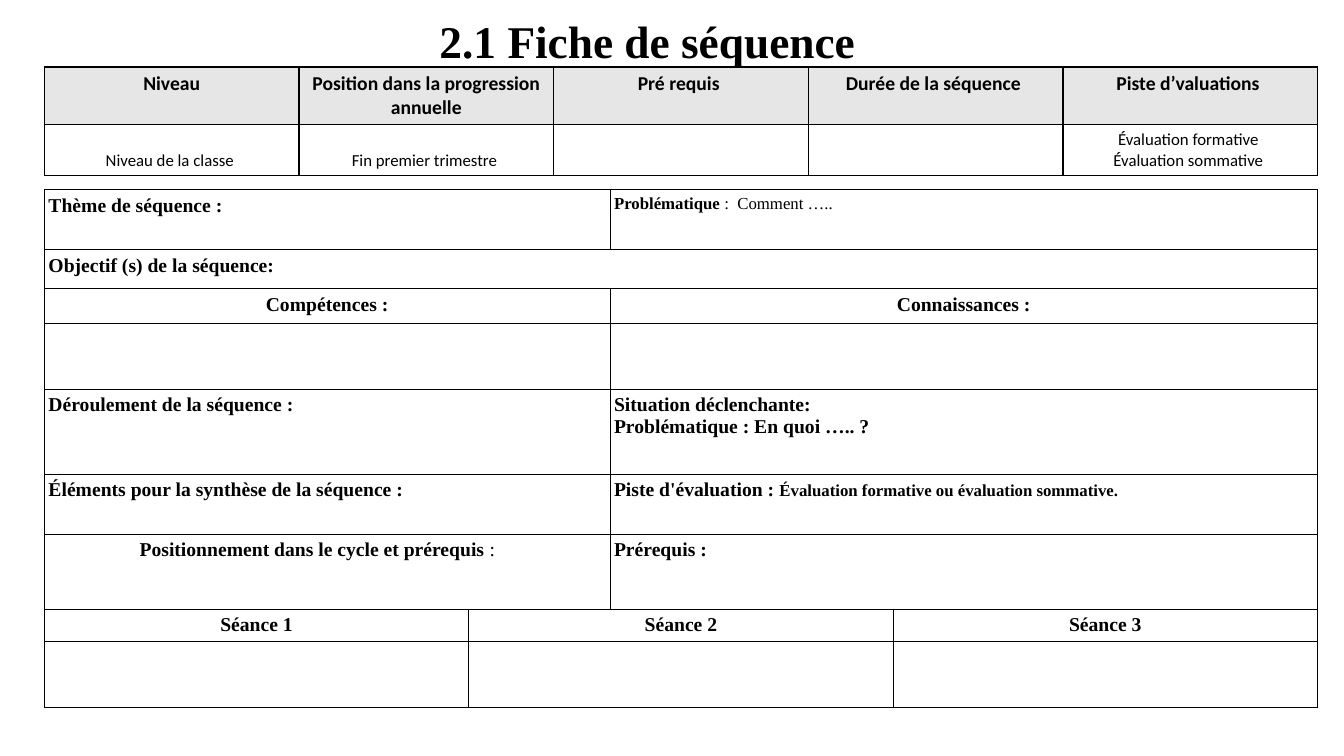
from dataclasses import dataclass

from lxml import etree
from pptx import Presentation
from pptx.dml.color import RGBColor
from pptx.enum import text
from pptx.oxml import ns
from pptx.util import Pt


@dataclass(frozen=True)
class Theme:
    ink: str = "000000"
    header_fill: str = "E7E6E6"
    serif: str = "Times New Roman"
    sans: str = "Calibri"
    title: float = 32.4
    heading: float = 14
    detail: float = 12


THEME = Theme()
CENTER = text.PP_ALIGN.CENTER
LEFT = text.PP_ALIGN.LEFT


@dataclass(frozen=True)
class Run:
    text: str
    size: float = THEME.heading
    bold: bool = True


@dataclass(frozen=True)
class Cell:
    paragraphs: tuple[tuple[Run, ...], ...] = ()
    span: int = 1
    align: text.PP_ALIGN = LEFT
    extra_right: float = 0
    fill: str | None = None


@dataclass(frozen=True)
class Grid:
    left: float
    top: float
    columns: list[float]
    heights: list[float]
    rows: list[list[Cell]]
    font: str
    border: float
    side_inset: float
    anchor: text.MSO_ANCHOR = text.MSO_ANCHOR.TOP


def label(*lines: str, span: int = 2, align: text.PP_ALIGN = LEFT) -> Cell:
    """Bold cell with one paragraph per line."""
    return Cell(tuple((Run(line),) for line in lines), span, align)


def header(line: str) -> Cell:
    return Cell(((Run(line),),), align=CENTER, fill=THEME.header_fill)


def value(*lines: str) -> Cell:
    """Plain centred cell under a header."""
    return Cell(tuple((Run(line, THEME.detail, False),) for line in lines), align=CENTER)


def add_run(paragraph, run: Run, font: str) -> None:
    piece = paragraph.add_run()
    piece.text = run.text
    piece.font.name = font
    piece.font.size = Pt(run.size)
    piece.font.bold = run.bold
    piece.font.color.rgb = RGBColor.from_string(THEME.ink)


def set_borders(cell, width: float) -> None:
    properties = cell._tc.get_or_add_tcPr()
    for side in ("a:lnL", "a:lnR", "a:lnT", "a:lnB"):
        line = etree.SubElement(properties, ns.qn(side), w=str(Pt(width)))
        fill = etree.SubElement(line, ns.qn("a:solidFill"))
        etree.SubElement(fill, ns.qn("a:srgbClr"), val=THEME.ink)


def fill_cell(cell, content: Cell, grid: Grid) -> None:
    set_borders(cell, grid.border)
    if content.fill:
        cell.fill.solid()
        cell.fill.fore_color.rgb = RGBColor.from_string(content.fill)
    else:
        cell.fill.background()
    cell.margin_left = Pt(grid.side_inset)
    cell.margin_right = Pt(grid.side_inset + content.extra_right)
    cell.margin_top = cell.margin_bottom = Pt(3.6)
    cell.vertical_anchor = text.MSO_ANCHOR.TOP if content.fill else grid.anchor
    frame = cell.text_frame
    for index, runs in enumerate(content.paragraphs):
        paragraph = frame.add_paragraph() if index else frame.paragraphs[0]
        paragraph.alignment = content.align
        for run in runs:
            add_run(paragraph, run, grid.font)


def add_grid(slide, grid: Grid) -> None:
    table = slide.shapes.add_table(
        len(grid.heights), len(grid.columns), Pt(grid.left), Pt(grid.top),
        Pt(sum(grid.columns)), Pt(sum(grid.heights))).table
    table.first_row = table.horz_banding = False
    for column, width in zip(table.columns, grid.columns):
        column.width = Pt(width)
    for row, height in zip(table.rows, grid.heights):
        row.height = Pt(height)
    for row_index, contents in enumerate(grid.rows):
        column_index = 0
        for content in contents:
            cell = table.cell(row_index, column_index)
            column_index += content.span
            if content.span > 1:
                cell.merge(table.cell(row_index, column_index - 1))
            fill_cell(cell, content, grid)


def add_title(slide, line: str) -> None:
    title = slide.shapes.title
    title.left, title.top, title.width, title.height = Pt(306.7), Pt(13), Pt(347), Pt(34.6)
    frame = title.text_frame
    frame.auto_size = text.MSO_AUTO_SIZE.NONE
    frame.vertical_anchor = text.MSO_ANCHOR.TOP
    frame.word_wrap = True
    paragraph = frame.paragraphs[0]
    paragraph.alignment = LEFT
    paragraph.line_spacing = 0.8
    add_run(paragraph, Run(line, THEME.title), THEME.serif)


GRID_LEFT = 31.75
GRID_WIDTH = 909.4
THIRD = GRID_WIDTH / 3
HALF = 404

SUMMARY = Grid(
    GRID_LEFT, 47.8, [GRID_WIDTH / 5] * 5, [41.2, 36.4],
    [
        [header(line) for line in (
            "Niveau", "Position dans la progression annuelle", "Pré requis ",
            "Durée de la séquence ", "Piste d’valuations ")],
        [value("Niveau de la classe "), value("Fin premier trimestre "), Cell(), Cell(),
         value("Évaluation formative ", "Évaluation sommative ")],
    ],
    THEME.sans, border=1, side_inset=7.2, anchor=text.MSO_ANCHOR.BOTTOM)

SEQUENCE = Grid(
    GRID_LEFT, 135.4, [THIRD, HALF - THIRD, 2 * THIRD - HALF, THIRD],
    [42.9, 27.8, 25, 47.1, 60.7, 42.9, 53.6, 22.9, 47.1],
    [
        [label("Thème de séquence :"),
         Cell(((Run("Problématique ", THEME.detail),
                Run(":  Comment …..", THEME.detail, False)),), 2)],
        [label("Objectif (s) de la séquence:", span=4)],
        [label("Compétences :", align=CENTER), label("Connaissances :", align=CENTER)],
        [Cell(span=2), Cell(span=2)],
        [label("Déroulement de la séquence :"),
         label("Situation déclenchante:", "Problématique : En quoi ….. ?")],
        [label("Éléments pour la synthèse de la séquence :"),
         Cell(((Run("Piste d'évaluation : "),
                Run("Évaluation formative ou évaluation sommative.", THEME.detail)),), 2)],
        [Cell(((Run("Positionnement dans le cycle et prérequis "),
                Run(":", bold=False)),), 2, CENTER, extra_right=14),
         label("Prérequis :")],
        [label(f"Séance {number}", span=span, align=CENTER)
         for number, span in enumerate((1, 2, 1), 1)],
        [Cell(), Cell(span=2), Cell()],
    ],
    THEME.serif, border=0.57, side_inset=2.9)


def main() -> None:
    presentation = Presentation()
    presentation.slide_width, presentation.slide_height = Pt(960), Pt(540)
    slide = presentation.slides.add_slide(presentation.slide_layouts[5])
    add_title(slide, "2.1 Fiche de séquence")
    add_grid(slide, SEQUENCE)
    add_grid(slide, SUMMARY)
    presentation.save("out.pptx")


if __name__ == "__main__":
    main()
